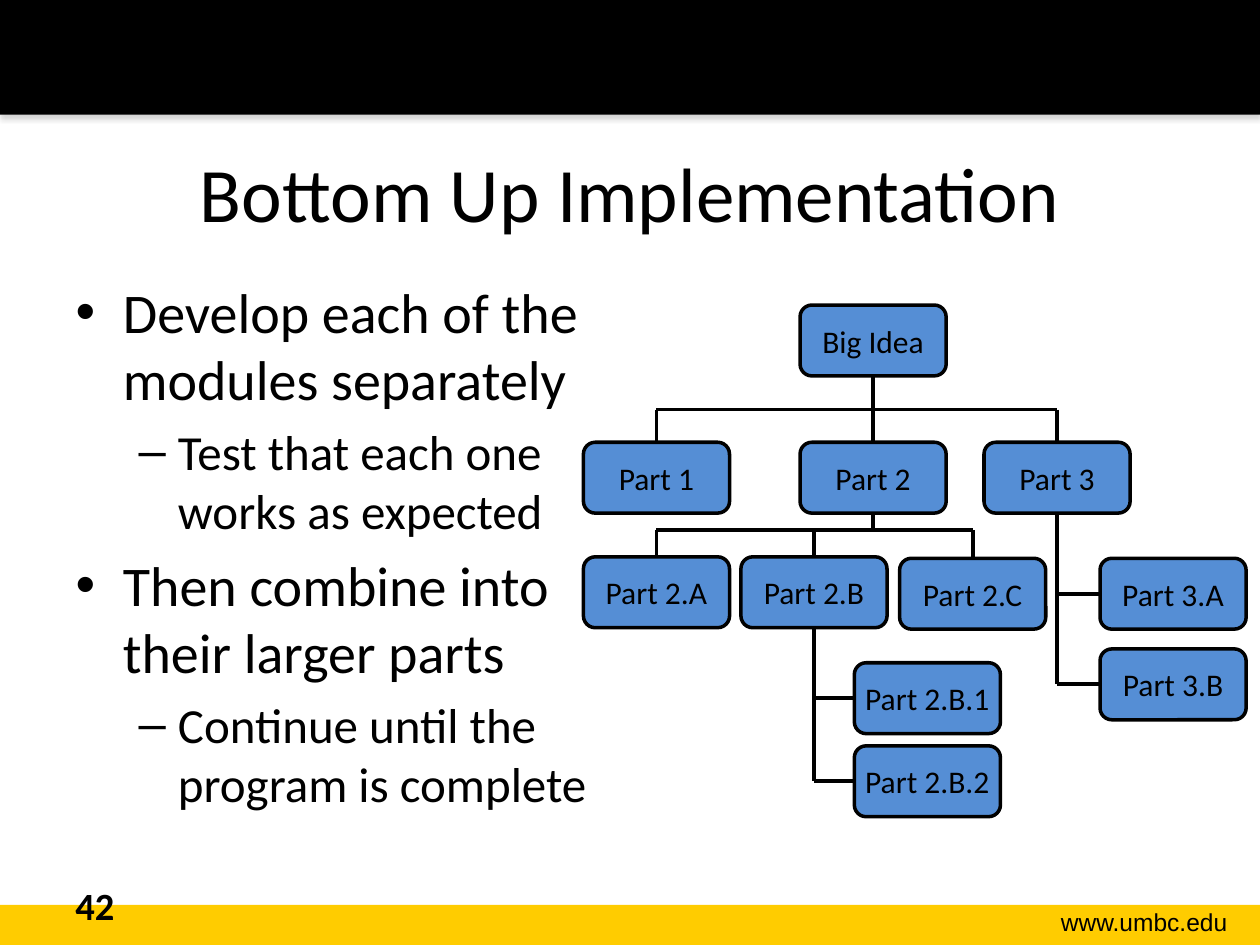
import pptx
import pptx.dml.color
import pptx.enum.shapes
import pptx.enum.text
import pptx.oxml
import pptx.oxml.ns
import pptx.util
from pptx.util import Pt

RGBColor = pptx.dml.color.RGBColor
SHAPE = pptx.enum.shapes.MSO_SHAPE
ALIGN = pptx.enum.text.PP_ALIGN
ANCHOR = pptx.enum.text.MSO_ANCHOR

BLACK = RGBColor(0x00, 0x00, 0x00)
GOLD = RGBColor(0xFF, 0xCC, 0x00)
BLUE = RGBColor(0x55, 0x8E, 0xD5)

TOP, LEFT, BOTTOM = 0, 1, 2
MODULE_W, MODULE_H = 83.5, 40.5

# Module name: left, top
MODULES = {
    "Big Idea": (457.2, 174.3),
    "Part 1": (333.4, 252.7),
    "Part 2": (457.2, 252.7),
    "Part 3": (562.3, 252.7),
    "Part 2.A": (333.4, 318.2),
    "Part 2.B": (423.4, 318.2),
    "Part 2.C": (514.1, 319),
    "Part 3.A": (628.6, 319),
    "Part 3.B": (628.6, 370.8),
    "Part 2.B.1": (488.2, 378.7),
    "Part 2.B.2": (488.2, 426.2),
}

# Level, wording
POINTS = [
    (0, "Develop each of the modules separately"),
    (1, "Test that each one works as expected"),
    (0, "Then combine into their larger parts"),
    (1, "Continue until the program is complete"),
]
LEVEL_SIZES = (32, 28)


def place(shape, left, top, width, height):
    shape.left, shape.top = Pt(left), Pt(top)
    shape.width, shape.height = Pt(width), Pt(height)


def write(paragraph, text, size, font="Calibri", bold=False, align=None):
    if align is not None:
        paragraph.alignment = align
    run = paragraph.add_run()
    run.text = text
    run.font.name = font
    run.font.size = Pt(size)
    run.font.bold = bold
    run.font.color.rgb = BLACK


def add_band(slide, top, height, color):
    band = slide.shapes.add_shape(SHAPE.RECTANGLE, 0, Pt(top), Pt(720), Pt(height))
    band.shadow.inherit = False
    band.fill.solid()
    band.fill.fore_color.rgb = color
    band.line.fill.background()
    return band


def add_soft_shadow(shape):
    effects = shape._element.spPr.find(pptx.oxml.ns.qn("a:effectLst"))
    effects.append(pptx.oxml.parse_xml(
        f'<a:outerShdw {pptx.oxml.ns.nsdecls("a")} blurRad="{Pt(3.1)}" dist="{Pt(1.8)}" '
        'dir="5400000" rotWithShape="0"><a:srgbClr val="808080">'
        '<a:alpha val="35000"/></a:srgbClr></a:outerShdw>'))


def add_label(slide, bounds, text, size, **style):
    label = slide.shapes.add_textbox(*(Pt(length) for length in bounds))
    label.text_frame.word_wrap = True
    write(label.text_frame.paragraphs[0], text, size, **style)


def add_module(slide, name, left, top):
    module = slide.shapes.add_shape(
        SHAPE.ROUNDED_RECTANGLE, Pt(left), Pt(top), Pt(MODULE_W), Pt(MODULE_H))
    module.shadow.inherit = False
    module.fill.solid()
    module.fill.fore_color.rgb = BLUE
    module.line.color.rgb = BLACK
    module.line.width = Pt(2)
    frame = module.text_frame
    frame.word_wrap = len(name) < 10
    frame.vertical_anchor = ANCHOR.MIDDLE
    write(frame.paragraphs[0], name, 18, align=ALIGN.CENTER)
    return module


def center_x(module):
    return module.left + module.width // 2


def center_y(module):
    return module.top + module.height // 2


def add_link(slide, start, end, start_side=None, end_side=None):
    """Link two ends; an end with a side is a module, otherwise a point."""
    start_point = start if start_side is None else (0, 0)
    end_point = end if end_side is None else (0, 0)
    link = slide.shapes.add_connector(
        pptx.enum.shapes.MSO_CONNECTOR.STRAIGHT, *start_point, *end_point)
    if start_side is not None:
        link.begin_connect(start, start_side)
    if end_side is not None:
        link.end_connect(end, end_side)
    link.line.color.rgb = BLACK
    link.line.width = Pt(2.25)
    link._element.spPr.append(pptx.oxml.parse_xml(
        f'<a:effectLst {pptx.oxml.ns.nsdecls("a")}/>'))


def add_crossbar(slide, y, children):
    """Draw a horizontal bar with a drop to the top of each child."""
    add_link(slide, (center_x(children[-1]), y), (center_x(children[0]), y))
    for child in children:
        add_link(slide, (center_x(child), y), child, end_side=TOP)


def add_side_branch(slide, parent, children):
    """Draw a spine under the parent with a stub to the left of each child."""
    x = center_x(parent)
    add_link(slide, parent, (x, center_y(children[-1])), start_side=BOTTOM)
    for child in children:
        add_link(slide, child, (x, center_y(child)), start_side=LEFT)


def add_text(slide):
    title, body = slide.placeholders
    place(title, 36, 64.8, 648, 90)
    title.text_frame.vertical_anchor = ANCHOR.MIDDLE
    write(title.text_frame.paragraphs[0], "Bottom Up Implementation", 44,
          align=ALIGN.CENTER)

    place(body, 36, 154.8, 312, 327.6)
    frame = body.text_frame
    for index, (level, wording) in enumerate(POINTS):
        paragraph = frame.add_paragraph() if index else frame.paragraphs[0]
        paragraph.level = level
        if index == 0:
            paragraph.space_before = Pt(0)
        write(paragraph, wording, LEVEL_SIZES[level])


def add_hierarchy(slide):
    module = {name: add_module(slide, name, *spot) for name, spot in MODULES.items()}

    # Big Idea to its three parts
    add_link(slide, module["Big Idea"], module["Part 2"], BOTTOM, TOP)
    add_crossbar(slide, Pt(234), [module["Part 1"], module["Part 3"]])

    # Part 2 to its three parts
    bar_y = Pt(303)
    add_link(slide, module["Part 2"], (center_x(module["Part 2"]), bar_y),
             start_side=BOTTOM)
    add_crossbar(slide, bar_y, [module[f"Part 2.{letter}"] for letter in "ABC"])

    # Side branches
    add_side_branch(slide, module["Part 3"], [module["Part 3.A"], module["Part 3.B"]])
    add_side_branch(slide, module["Part 2.B"],
                    [module["Part 2.B.1"], module["Part 2.B.2"]])


def main():
    deck = pptx.Presentation()
    deck.slide_width, deck.slide_height = Pt(720), Pt(540)
    slide = deck.slides.add_slide(deck.slide_layouts[1])

    # Header and footer
    add_band(slide, 517, 23, GOLD)
    add_soft_shadow(add_band(slide, 0, 65.5, BLACK))
    add_label(slide, (565.2, 514.8, 143.3, 24.5), "www.umbc.edu", 14,
              font="Arial", align=ALIGN.RIGHT)
    add_label(slide, (36, 500.4, 167.8, 28.8), "42", 22, bold=True)

    # Content
    add_text(slide)
    add_hierarchy(slide)
    deck.save("out.pptx")


if __name__ == "__main__":
    main()
